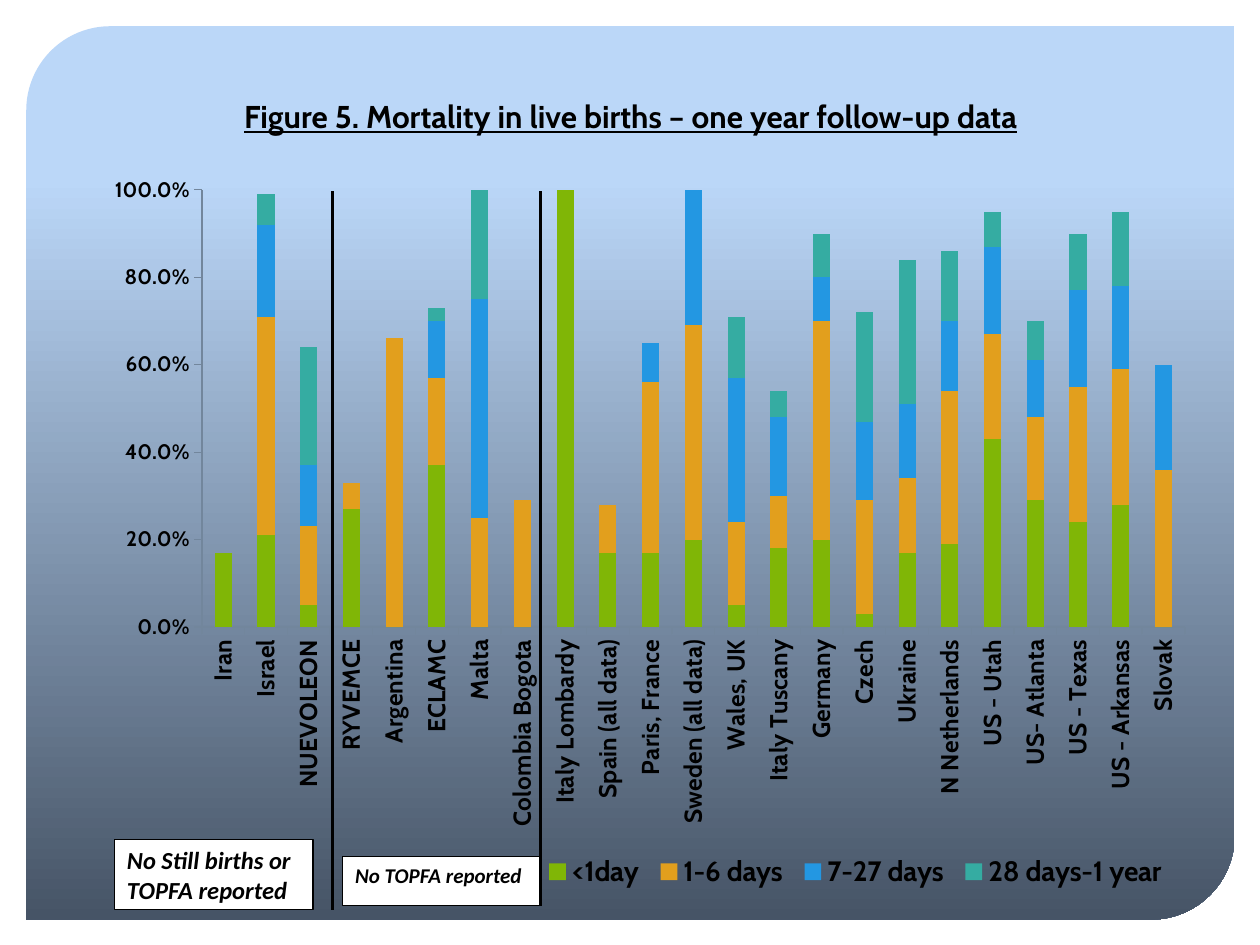
import pptx
import pptx.chart.data
import pptx.dml.color
import pptx.enum.chart
import pptx.enum.shapes
import pptx.enum.text
import pptx.oxml
import pptx.oxml.ns
import pptx.util

Cm = pptx.util.Cm
Pt = pptx.util.Pt
qn = pptx.oxml.ns.qn

COLORS = {
    "black": "000000", "white": "FFFFFF", "axis": "72869C",
    "sky": "BBD7F8", "slate": "465466",
}
SERIES = {
    "<1day": ("80B606", [
        0.17, 0.21, 0.05, 0.27, 0, 0.37, 0, 0, 1, 0.17, 0.17, 0.2, 0.05, 0.18, 0.2,
        0.03, 0.17, 0.19, 0.43, 0.29, 0.24, 0.28, 0]),
    "1-6 days": ("E29F1D", [
        0, 0.5, 0.18, 0.06, 0.66, 0.2, 0.25, 0.29, None, 0.11, 0.39, 0.49, 0.19, 0.12,
        0.5, 0.26, 0.17, 0.35, 0.24, 0.19, 0.31, 0.31, 0.36]),
    "7-27 days": ("2397E2", [
        None, 0.21, 0.14, None, None, 0.13, 0.5, None, None, None, 0.09, 0.31, 0.33,
        0.18, 0.1, 0.18, 0.17, 0.16, 0.2, 0.13, 0.22, 0.19, 0.24]),
    "28 days-1 year": ("35ACA2", [
        None, 0.07, 0.27, None, None, 0.03, 0.25, None, None, None, None, None, 0.14,
        0.06, 0.1, 0.25, 0.33, 0.16, 0.08, 0.09, 0.13, 0.17, None]),
}
PLACES = [
    "Iran", "Israel", "NUEVOLEON", "RYVEMCE", "Argentina", "ECLAMC", "Malta",
    "Colombia Bogota", "Italy Lombardy", "Spain (all data)", "Paris, France",
    "Sweden (all data)", "Wales, UK", "Italy Tuscany", "Germany", "Czech", "Ukraine",
    "N Netherlands", "US - Utah", "US- Atlanta", "US - Texas", "US - Arkansas", "Slovak",
]


def rgb(name):
    """Return the colour stored under a name."""
    return pptx.dml.color.RGBColor.from_string(COLORS[name])


def style_font(font, face, size):
    """Set a bold black font."""
    font.name, font.size, font.bold = face, Pt(size), True
    font.color.rgb = rgb("black")


def add_panel(slide, x, y, w, h):
    """Draw the gradient panel behind everything else."""
    sp = slide.shapes.add_shape(
        pptx.enum.shapes.MSO_SHAPE.ROUND_2_DIAG_RECTANGLE, Cm(x), Cm(y), Cm(w), Cm(h))
    sp.adjustments[0], sp.adjustments[1] = 0.094, 0
    sp.shadow.inherit = False
    sp.line.fill.background()
    sp.fill.gradient()
    sp.fill.gradient_angle = 270
    stops = ((0.17, "sky"), (1, "slate"))
    for stop, (position, color) in zip(sp.fill.gradient_stops, stops):
        stop.position, stop.color.rgb = position, rgb(color)
    sp.element.getparent().insert(2, sp.element)


def add_title(slide, x, y, w, h):
    """Place and format the title."""
    sp = slide.shapes.title
    sp.left, sp.top, sp.width, sp.height = Cm(x), Cm(y), Cm(w), Cm(h)
    tf = sp.text_frame
    tf.text = "Figure 5. Mortality in live births – one year follow-up data"
    tf.word_wrap = True
    tf.auto_size = pptx.enum.text.MSO_AUTO_SIZE.SHAPE_TO_FIT_TEXT
    tf.vertical_anchor = pptx.enum.text.MSO_ANCHOR.MIDDLE
    p = tf.paragraphs[0]
    p.alignment = pptx.enum.text.PP_ALIGN.CENTER
    style_font(p.runs[0].font, "Cabin", 18)
    p.runs[0].font.underline = True


def set_layout(parent, index, x, y, w, h, inner=False):
    """Give a chart part a manual layout in fractions of the chart."""
    for old in parent.findall(qn("c:layout")):
        parent.remove(old)
    target = '<c:layoutTarget val="inner"/>' if inner else ""
    modes = '<c:xMode val="edge"/><c:yMode val="edge"/>'
    sizes = "".join(f'<c:{k} val="{v}"/>' for k, v in zip("xywh", (x, y, w, h)))
    parent.insert(index, pptx.oxml.parse_xml(
        f'<c:layout {pptx.oxml.ns.nsdecls("c")}><c:manualLayout>'
        f'{target}{modes}{sizes}</c:manualLayout></c:layout>'))


def add_mortality_chart(slide, x, y, w, h):
    """Add the stacked columns of mortality by age at death."""
    enums = pptx.enum.chart
    data = pptx.chart.data.CategoryChartData(number_format="0.0%")
    data.categories = PLACES
    for name, (_, values) in SERIES.items():
        data.add_series(name, values)
    chart = slide.shapes.add_chart(
        enums.XL_CHART_TYPE.COLUMN_STACKED, Cm(x), Cm(y), Cm(w), Cm(h), data).chart
    style_font(chart.font, "Cabin", 10)
    chart.has_title = False
    plot = chart.plots[0]
    plot.gap_width, plot.overlap, plot.vary_by_categories = 150, 100, False
    for series in plot.series:
        series.format.fill.solid()
        series.format.fill.fore_color.rgb = pptx.dml.color.RGBColor.from_string(
            SERIES[series.name][0])

    for axis, size in ((chart.category_axis, 14), (chart.value_axis, 12)):
        style_font(axis.tick_labels.font, "Cabin", size)
        axis.has_major_gridlines = False
        axis.major_tick_mark = enums.XL_TICK_MARK.OUTSIDE
        axis.format.line.color.rgb = rgb("axis")
        axis.format.line.width = Pt(0.75)
    body = chart.category_axis.tick_labels.font._element.getparent().getparent().getparent()
    body.find(qn("a:bodyPr")).set("rot", "-5400000")
    body.find(qn("a:bodyPr")).set("vert", "horz")
    axis = chart.value_axis
    axis.minimum_scale, axis.maximum_scale, axis.major_unit = 0, 1, 0.2
    axis.tick_labels.number_format = "0.0%"
    axis.tick_labels.number_format_is_linked = False

    chart.has_legend = True
    legend = chart.legend
    legend.position = enums.XL_LEGEND_POSITION.BOTTOM
    legend.include_in_layout = False
    style_font(legend.font, "Cabin", 16)
    set_layout(legend._element, 1, 0.4, 0.91, 0.59, 0.08)
    set_layout(chart._chartSpace.chart.plotArea, 0, 0.09, 0.03, 0.91, 0.59, True)


def add_note(slide, x, y, w, h, text, size):
    """Add a framed white note."""
    sp = slide.shapes.add_shape(
        pptx.enum.shapes.MSO_SHAPE.RECTANGLE, Cm(x), Cm(y), Cm(w), Cm(h))
    sp.shadow.inherit = False
    sp.fill.solid()
    sp.fill.fore_color.rgb = rgb("white")
    sp.line.color.rgb = rgb("black")
    sp.line.width = Pt(0.75)
    tf = sp.text_frame
    tf.text = text
    tf.word_wrap = True
    tf.vertical_anchor = pptx.enum.text.MSO_ANCHOR.TOP
    p = tf.paragraphs[0]
    p.alignment = pptx.enum.text.PP_ALIGN.LEFT
    p.space_after = Pt(10)
    style_font(p.runs[0].font, "Calibri", size)
    p.runs[0].font.italic = True


def add_divider(slide, x, top, bottom):
    """Add a vertical line between two groups of columns."""
    line = slide.shapes.add_connector(
        pptx.enum.shapes.MSO_CONNECTOR.STRAIGHT, Cm(x), Cm(top), Cm(x), Cm(bottom))
    line.line.color.rgb = rgb("black")
    line.line.width = Pt(1.5)
    line.element.spPr.append(pptx.oxml.parse_xml(
        f'<a:effectLst {pptx.oxml.ns.nsdecls("a")}/>'))


def add_group_marks(slide, x, y, w, h):
    """Mark the reporting groups over the chart box."""
    add_note(slide, x + 0.2, y + h - 1.4, 4, 1.42, "No Still births or TOPFA reported", 14)
    add_note(slide, x + 4.8, y + h - 1.05, 3.99, 0.99, "No TOPFA reported", 12)
    add_divider(slide, x + 4.6, y + 0.48, y + h + 0.02)
    add_divider(slide, x + 8.79, y + 0.48, y + h - 0.06)


def main():
    """Build the slide and save it."""
    prs = pptx.Presentation()
    prs.slide_width, prs.slide_height = Cm(25.4), Cm(19.05)
    slide = prs.slides.add_slide(prs.slide_layouts[5])
    chart_box = (2.11, 3.38, 21.79, 14.94)
    add_panel(slide, 0.53, 0.53, 24.36, 18.01)
    add_title(slide, 0.51, 1.83, 24.41, 1.02)
    add_mortality_chart(slide, *chart_box)
    add_group_marks(slide, *chart_box)
    prs.save("out.pptx")


if __name__ == "__main__":
    main()
